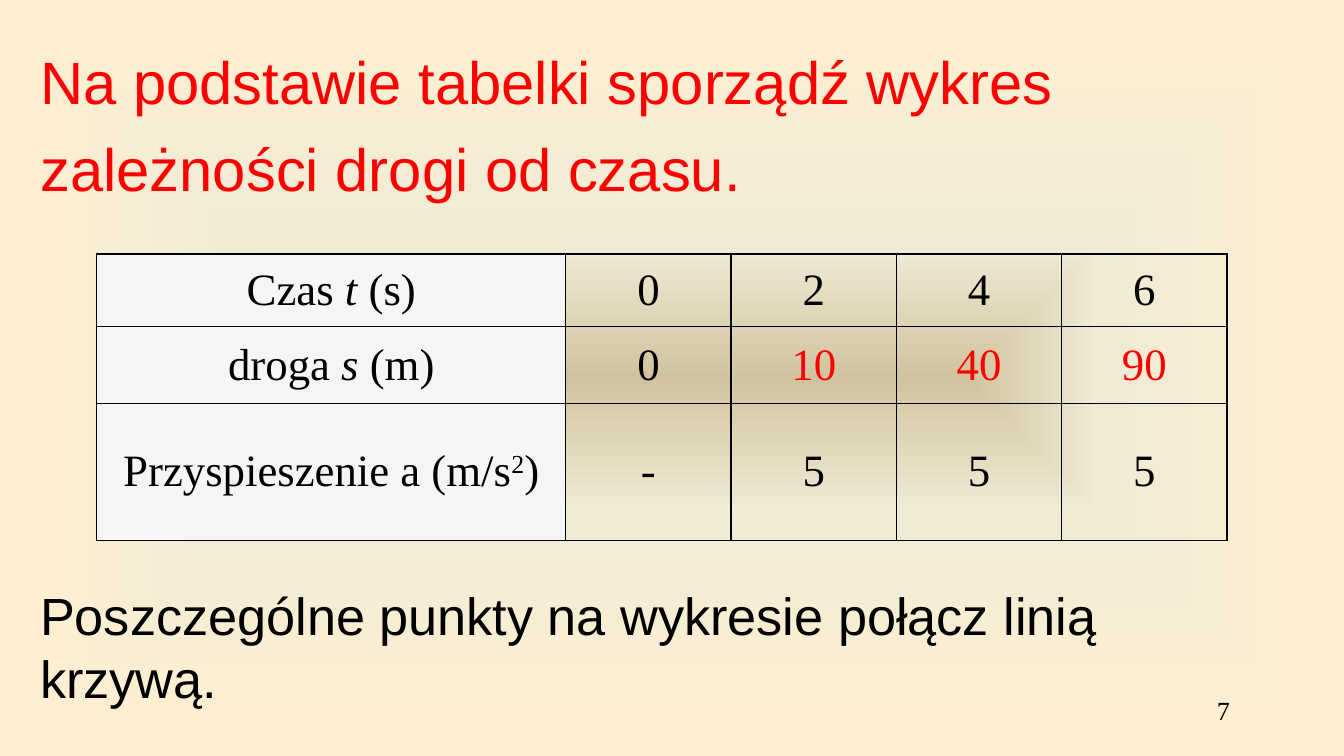
import pptx
import pptx.dml.color
import pptx.enum.text
import pptx.oxml
import pptx.oxml.ns
import pptx.util

Inches = pptx.util.Inches
Pt = pptx.util.Pt
RGBColor = pptx.dml.color.RGBColor
ALIGN = pptx.enum.text.PP_ALIGN
ANCHOR = pptx.enum.text.MSO_ANCHOR
AUTO_SIZE = pptx.enum.text.MSO_AUTO_SIZE

RED = RGBColor(0xFF, 0x00, 0x00)
BLACK = RGBColor(0x00, 0x00, 0x00)
LABEL_FILL = RGBColor(0xF5, 0xF5, 0xF5)
BACKGROUND_STOPS = [
    (0, RGBColor(0xD1, 0xC3, 0x9F)),
    (35, RGBColor(0xF0, 0xEB, 0xD5)),
    (100, RGBColor(0xFF, 0xEF, 0xD1)),
]

SANS = "Arial"
SERIF = "Times New Roman"

PAGE_WIDTH = 10
PAGE_HEIGHT = PAGE_WIDTH * 9 / 16

COLUMN_WIDTHS = [3.49] + [1.23] * 4
ROW_HEIGHTS = [0.54, 0.57, 1.02]
# Each label is a list of (text, style) runs
ROW_LABELS = [
    [("Czas ", None), ("t", "italic"), (" (s)", None)],
    [("droga ", None), ("s ", "italic"), ("(m)", None)],
    [("Przyspieszenie a (m/s", None), ("2", "superscript"), (")", None)],
]
ROW_VALUES = [["0", "2", "4", "6"], ["0", "10", "40", "90"], ["-", "5", "5", "5"]]
RESULTS = {"10", "40", "90"}


def add_run(para, text, font, size, color, style=None):
    span = para.add_run()
    span.text = text
    span.font.name = font
    span.font.size = Pt(size)
    span.font.color.rgb = color
    if style == "italic":
        span.font.italic = True
    elif style == "superscript":
        span.font._element.set("baseline", "30000")


def set_background(page):
    """Fill the page with a gradient that spreads from its centre."""
    stops = "".join(
        f'<a:gs pos="{percent * 1000}"><a:srgbClr val="{color}"/></a:gs>'
        for percent, color in BACKGROUND_STOPS
    )
    background = pptx.oxml.parse_xml(
        f'<p:bg {pptx.oxml.ns.nsdecls("p", "a")}><p:bgPr>'
        f'<a:gradFill rotWithShape="1"><a:gsLst>{stops}</a:gsLst>'
        '<a:path path="shape"><a:fillToRect l="50000" t="50000" r="50000" b="50000"/>'
        "</a:path></a:gradFill><a:effectLst/></p:bgPr></p:bg>"
    )
    page._element.cSld.insert(0, background)


def place(box, left, top, width, height):
    box.left, box.top = Inches(left), Inches(top)
    box.width, box.height = Inches(width), Inches(height)


def format_statement(box):
    """Set a full-width, left-aligned sentence and return its paragraph."""
    frame = box.text_frame
    frame.word_wrap = True
    frame.auto_size = AUTO_SIZE.SHAPE_TO_FIT_TEXT
    frame.vertical_anchor = ANCHOR.MIDDLE
    para = frame.paragraphs[0]
    para.alignment = ALIGN.LEFT
    return para


def add_textbox(page, left, top, width, height):
    return page.shapes.add_textbox(
        Inches(left), Inches(top), Inches(width), Inches(height)
    )


def set_borders(cell):
    properties = cell._tc.get_or_add_tcPr()
    for index, side in enumerate(("lnL", "lnR", "lnT", "lnB")):
        line = pptx.oxml.parse_xml(
            f'<a:{side} {pptx.oxml.ns.nsdecls("a")} w="{Pt(0.75)}"><a:solidFill>'
            f'<a:srgbClr val="{BLACK}"/></a:solidFill></a:{side}>'
        )
        properties.insert(index, line)


def fill_cell(cell, runs, color=BLACK, fill=None):
    cell.vertical_anchor = ANCHOR.MIDDLE
    cell.margin_left = cell.margin_right = Inches(0.1)
    cell.margin_top = cell.margin_bottom = Inches(0.04)
    if fill is None:
        cell.fill.background()
    else:
        cell.fill.solid()
        cell.fill.fore_color.rgb = fill
    set_borders(cell)
    para = cell.text_frame.paragraphs[0]
    para.alignment = ALIGN.CENTER
    for text, style in runs:
        add_run(para, text, SERIF, 24, color, style)


def add_motion_table(page):
    table = page.shapes.add_table(
        len(ROW_HEIGHTS), len(COLUMN_WIDTHS),
        Inches(0.72), Inches(1.89),
        Inches(sum(COLUMN_WIDTHS)), Inches(sum(ROW_HEIGHTS)),
    ).table
    table.first_row = table.horz_banding = False
    for column, width in zip(table.columns, COLUMN_WIDTHS):
        column.width = Inches(width)
    for row, height, label, values in zip(
        table.rows, ROW_HEIGHTS, ROW_LABELS, ROW_VALUES
    ):
        row.height = Inches(height)
        label_cell, *value_cells = row.cells
        fill_cell(label_cell, label, fill=LABEL_FILL)
        for cell, value in zip(value_cells, values):
            fill_cell(cell, [(value, None)], RED if value in RESULTS else BLACK)


def main():
    deck = pptx.Presentation()
    deck.slide_width, deck.slide_height = Inches(PAGE_WIDTH), Inches(PAGE_HEIGHT)
    page = deck.slides.add_slide(deck.slide_layouts.get_by_name("Title Only"))
    set_background(page)

    # Task; the larger closing space sets the height of the last line
    title = page.shapes.title
    place(title, 0.2, 0.28, 9.45, 1.31)
    para = format_statement(title)
    task = "Na podstawie tabelki sporządź wykres zależności drogi od czasu."
    add_run(para, task, SANS, 32, RED)
    add_run(para, " ", SANS, 40, RED)

    # Measurements
    add_motion_table(page)

    # Page number
    number_box = add_textbox(page, 7.17, 5.12, 2.08, 0.38)
    number_box.text_frame.word_wrap = True
    para = number_box.text_frame.paragraphs[0]
    para.alignment = ALIGN.RIGHT
    add_run(para, "7", SERIF, 14, BLACK)

    # Hint
    para = format_statement(add_textbox(page, 0.2, 4.29, 9.45, 1.04))
    hint = "Poszczególne punkty na wykresie połącz linią krzywą."
    add_run(para, hint, SANS, 28, BLACK)

    deck.save("out.pptx")


if __name__ == "__main__":
    main()
